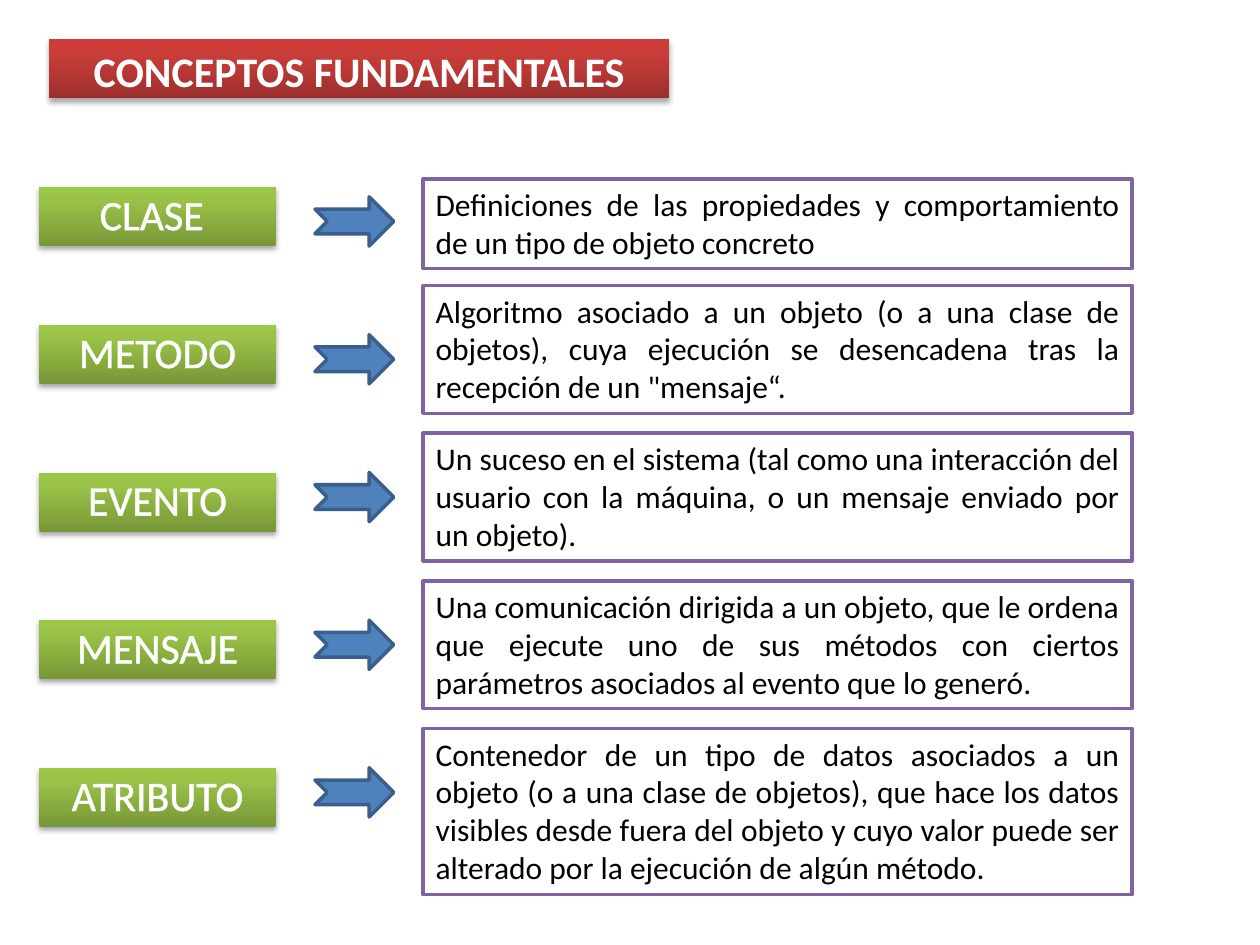
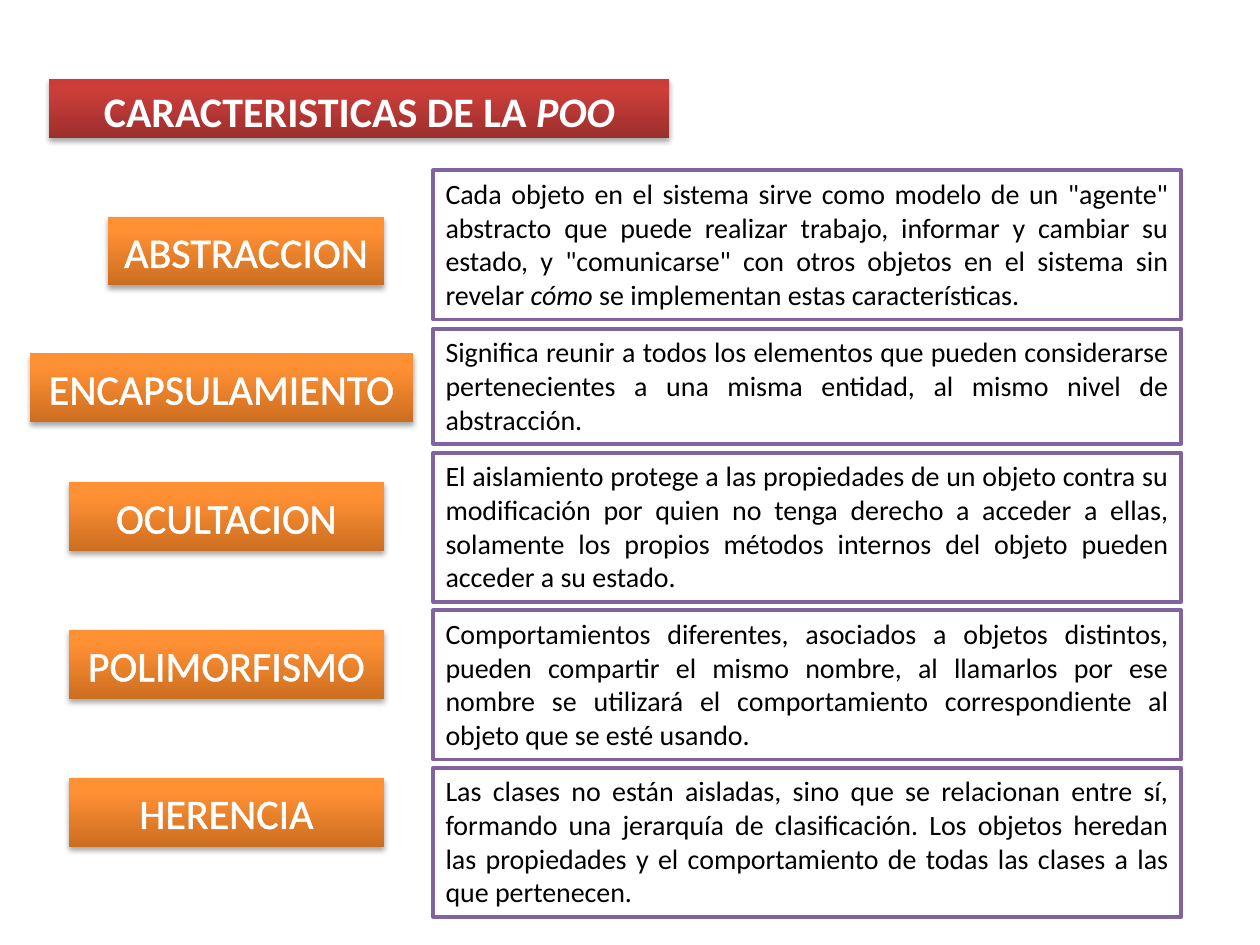
import pptx
import pptx.dml.color
import pptx.enum.shapes
import pptx.enum.text
import pptx.oxml
import pptx.oxml.ns
import pptx.util

RGBColor = pptx.dml.color.RGBColor
Align = pptx.enum.text.PP_ALIGN
Anchor = pptx.enum.text.MSO_ANCHOR
AutoSize = pptx.enum.text.MSO_AUTO_SIZE
Shape = pptx.enum.shapes.MSO_SHAPE
Pt = pptx.util.Pt

WHITE = RGBColor(0xFF, 0xFF, 0xFF)
BLACK = RGBColor(0x00, 0x00, 0x00)
PURPLE = RGBColor(0x80, 0x64, 0xA2)
BLUE = RGBColor(0x4F, 0x81, 0xBD)
DARK_BLUE = RGBColor(0x3A, 0x5F, 0x8C)
RED_BAND = (RGBColor(0x9C, 0x2F, 0x2D), RGBColor(0xCB, 0x3E, 0x3A), RGBColor(0xCE, 0x3B, 0x37))
GREEN_BAND = (RGBColor(0x77, 0x97, 0x37), RGBColor(0x9B, 0xC3, 0x48), RGBColor(0x9D, 0xC7, 0x46))
ORANGE_BAND = (RGBColor(0xCC, 0x6E, 0x20), RGBColor(0xFF, 0x90, 0x34), RGBColor(0xFF, 0x91, 0x36))

FONT = "Calibri"
COLUMNS = 64
LINE_FACTOR = 1.22
BOX_PADDING = Pt(7.2)


class Page:
    def __init__(self, deck):
        self.deck = deck
        self.unit = deck.slide_width / COLUMNS
        self.slide = None

    def start(self):
        self.slide = self.deck.slides.add_slide(self.deck.slide_layouts[5])

    def place(self, *cells):
        return [round(cell * self.unit) for cell in cells]

    def shape(self, kind, *cells):
        shape = self.slide.shapes.add_shape(kind, *self.place(*cells))
        shape.shadow.inherit = False
        return shape

    def outline(self, shape, fill, line):
        shape.fill.solid()
        shape.fill.fore_color.rgb = fill
        shape.line.color.rgb = line
        shape.line.width = Pt(2)

    def band(self, shape, colors):
        stops = "".join(
            f'<a:gs pos="{share * 1000}"><a:srgbClr val="{color}"/></a:gs>'
            for share, color in zip((0, 80, 100), colors)
        )
        properties = shape._element.spPr
        for old in properties.findall(pptx.oxml.ns.qn("a:effectLst")):
            properties.remove(old)
        for body in (
            f'<a:gradFill %s rotWithShape="1"><a:gsLst>{stops}</a:gsLst>'
            '<a:lin ang="16200000" scaled="0"/></a:gradFill>',
            "<a:ln %s><a:noFill/></a:ln>",
            '<a:effectLst %s><a:outerShdw blurRad="40000" dist="23000" dir="5400000" rotWithShape="0">'
            '<a:srgbClr val="000000"><a:alpha val="35000"/></a:srgbClr></a:outerShdw></a:effectLst>',
        ):
            properties.append(pptx.oxml.parse_xml(body % pptx.oxml.ns.nsdecls("a")))

    def set_text(self, shape, text, size, color, align, anchor, bold=False):
        frame = shape.text_frame
        frame.word_wrap = True
        frame.auto_size = AutoSize.NONE
        frame.vertical_anchor = anchor
        para = frame.paragraphs[0]
        para.alignment = align
        for index, part in enumerate(text.split("*")):
            if part:
                span = para.add_run()
                span.text = part
                span.font.name = FONT
                span.font.size = Pt(size)
                span.font.color.rgb = color
                span.font.bold = bold
                span.font.italic = index % 2 == 1
        return para

    def title(self, text, row):
        title = self.slide.shapes.title
        title.left, title.top, title.width, title.height = self.place(2.5, row, 31.5, 3)
        self.band(title, RED_BAND)
        self.set_text(title, text, 24, WHITE, Align.CENTER, Anchor.TOP, bold=True)

    def label(self, text, cells, colors, spacing=1.0, indent=None):
        label = self.shape(Shape.RECTANGLE, *cells)
        self.band(label, colors)
        align = Align.CENTER if indent is None else Align.LEFT
        para = self.set_text(label, text, 24, WHITE, align, Anchor.MIDDLE)
        para.line_spacing = spacing
        if indent is not None:
            para._p.get_or_add_pPr().set("marL", str(pptx.util.Inches(indent)))
        for span in para.runs:
            span._r.get_or_add_rPr().insert(0, pptx.oxml.parse_xml(
                f'<a:ln {pptx.oxml.ns.nsdecls("a")} w="18415"><a:solidFill>'
                f'<a:srgbClr val="{WHITE}"/></a:solidFill></a:ln>'
            ))

    def arrow(self, row):
        arrow = self.shape(Shape.NOTCHED_RIGHT_ARROW, 16, row, 4, 2.5)
        self.outline(arrow, BLUE, DARK_BLUE)

    def definition(self, text, column, row, width, lines, size):
        height = (lines * Pt(size) * LINE_FACTOR + BOX_PADDING) / self.unit
        box = self.shape(Shape.RECTANGLE, column, row, width, height)
        self.outline(box, WHITE, PURPLE)
        self.set_text(box, text, size, BLACK, Align.JUSTIFY, Anchor.TOP)
        box.text_frame.auto_size = AutoSize.SHAPE_TO_FIT_TEXT


CONCEPTS = [
    ("CLASE", 9.5, 10, 9.1, 2, "Definiciones de las propiedades y comportamiento de un tipo de objeto concreto"),
    ("METODO", 16.5, 17, 14.5, 3,
     "Algoritmo asociado a un objeto (o a una clase de objetos), cuya ejecución se desencadena "
     "tras la recepción de un \"mensaje“."),
    ("EVENTO", 24, 24, 22, 3,
     "Un suceso en el sistema (tal como una interacción del usuario con la máquina, "
     "o un mensaje enviado por un objeto)."),
    ("MENSAJE", 31.5, 31.5, 29.5, 3,
     "Una comunicación dirigida a un objeto, que le ordena que ejecute uno de sus métodos "
     "con ciertos parámetros asociados al evento que lo generó."),
    ("ATRIBUTO", 39, 39, 37, 4,
     "Contenedor de un tipo de datos asociados a un objeto (o a una clase de objetos), "
     "que hace los datos visibles desde fuera del objeto y cuyo valor puede ser alterado "
     "por la ejecución de algún método."),
]

FEATURES = [
    ("ABSTRACCION", 5.5, 11, 14, 8.65, 4,
     "Cada objeto en el sistema sirve como modelo de un \"agente\" abstracto que puede realizar "
     "trabajo, informar y cambiar su estado, y \"comunicarse\" con otros objetos en el sistema "
     "sin revelar *cómo* se implementan estas características."),
    ("ENCAPSULAMIENTO", 1.5, 17.95, 19.5, 16.7, 3,
     "Significa reunir a todos los elementos que pueden considerarse pertenecientes "
     "a una misma entidad, al mismo nivel de abstracción."),
    ("OCULTACION", 3.5, 24.5, 16, 23, 4,
     "El aislamiento protege a las propiedades de un objeto contra su modificación por quien "
     "no tenga derecho a acceder a ellas, solamente los propios métodos internos del objeto "
     "pueden acceder a su estado."),
    ("POLIMORFISMO", 3.5, 32, 16, 31, 4,
     "Comportamientos diferentes, asociados a objetos distintos, pueden compartir el mismo "
     "nombre, al llamarlos por ese nombre se utilizará el comportamiento correspondiente "
     "al objeto que se esté usando."),
    ("HERENCIA", 3.5, 39.5, 16, 39, 4,
     "Las clases no están aisladas, sino que se relacionan entre sí, formando una jerarquía "
     "de clasificación. Los objetos heredan las propiedades y el comportamiento de todas "
     "las clases a las que pertenecen."),
]


def main():
    deck = pptx.Presentation()
    deck.slide_width = pptx.util.Inches(10)
    deck.slide_height = pptx.util.Inches(7.5)
    page = Page(deck)

    page.start()
    page.title("CONCEPTOS FUNDAMENTALES", 2)
    for name, label_row, arrow_row, box_row, lines, text in CONCEPTS:
        indent = 0.38 if name == "CLASE" else None
        page.label(name, (2, label_row, 12, 3), GREEN_BAND, 0.9, indent)
        page.arrow(arrow_row)
        page.definition(text, 21.5, box_row, 36, lines, 18)

    page.start()
    page.title("CARACTERISTICAS DE LA *POO*", 4)
    for name, column, label_row, width, box_row, lines, text in FEATURES:
        page.label(name, (column, label_row, width, 3.5), ORANGE_BAND)
        page.definition(text, 22, box_row, 38, lines, 16)

    deck.save("out.pptx")


if __name__ == "__main__":
    main()
